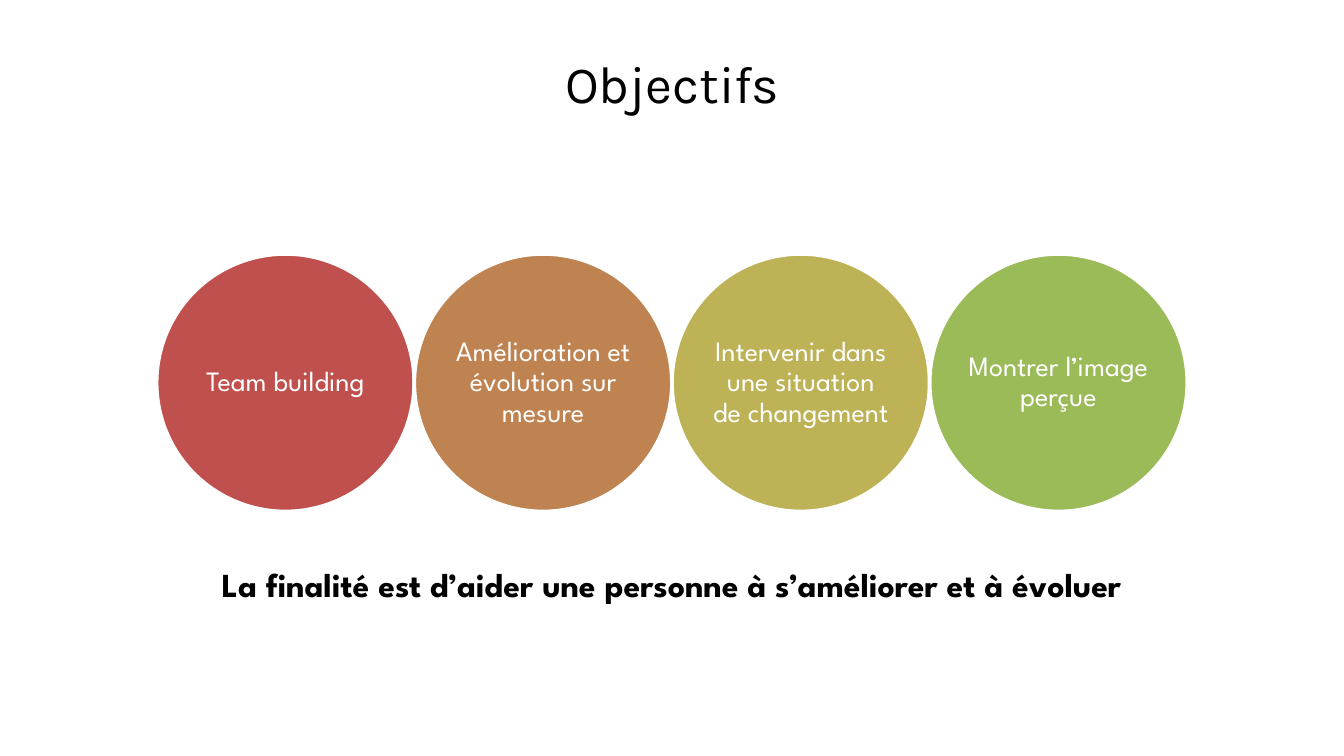
"""Build the goals slide: a title, a row of touching circles and a closing line."""

from dataclasses import dataclass

from pptx import Presentation
from pptx.dml.color import RGBColor
from pptx.enum.shapes import MSO_SHAPE
from pptx.enum.text import MSO_ANCHOR, PP_ALIGN
from pptx.slide import Slide
from pptx.text.text import TextFrame
from pptx.util import Cm, Pt

OVAL = MSO_SHAPE.OVAL
MIDDLE = MSO_ANCHOR.MIDDLE
CENTER = PP_ALIGN.CENTER


@dataclass(frozen=True)
class Style:
    font: str
    size: float
    color: str
    bold: bool = False


@dataclass(frozen=True)
class Theme:
    title: Style = Style("Karla", 28, "000000")
    label: Style = Style("League Spartan", 15, "FFFFFF")
    closing: Style = Style("League Spartan", 18, "000000", True)
    edge: str = "FFFFFF"
    rim: float = 2


@dataclass(frozen=True)
class Goal:
    text: str
    fill: str


THEME = Theme()
WIDTH, HEIGHT = 25.4, 14.29
SIDE, TOP = 4.87, 4.8
GOALS = [
    Goal("Team building", "C0504D"),
    Goal("Amélioration et évolution sur mesure", "BE8351"),
    Goal("Intervenir dans une situation de changement", "BDB255"),
    Goal("Montrer l’image perçue", "9BBB59"),
]


def write(frame: TextFrame, text: str, style: Style) -> None:
    frame.word_wrap = True
    para = frame.paragraphs[0]
    para.text = text
    para.alignment = CENTER
    para.font.name = style.font
    para.font.size = Pt(style.size)
    para.font.bold = style.bold
    para.font.color.rgb = RGBColor.from_string(style.color)


def add_line(slide: Slide, top: float, height: float, text: str, style: Style) -> None:
    box = slide.shapes.add_textbox(0, Cm(top), Cm(WIDTH), Cm(height))
    write(box.text_frame, text, style)


def add_goal(slide: Slide, left: float, goal: Goal) -> None:
    disc = slide.shapes.add_shape(OVAL, Cm(left), Cm(TOP), Cm(SIDE), Cm(SIDE))
    disc.shadow.inherit = False
    disc.fill.solid()
    disc.fill.fore_color.rgb = RGBColor.from_string(goal.fill)
    disc.line.color.rgb = RGBColor.from_string(THEME.edge)
    disc.line.width = Pt(THEME.rim)
    frame = disc.text_frame
    frame.margin_left = frame.margin_right = 0
    frame.margin_top = frame.margin_bottom = 0
    frame.vertical_anchor = MIDDLE
    write(frame, goal.text, THEME.label)
    frame.paragraphs[0].line_spacing = 0.9


def main() -> None:
    deck = Presentation()
    deck.slide_width, deck.slide_height = Cm(WIDTH), Cm(HEIGHT)
    slide = deck.slides.add_slide(deck.slide_layouts[6])
    add_line(slide, 0.84, 0.97, "Objectifs", THEME.title)
    start = (WIDTH - SIDE * len(GOALS)) / 2
    for index, goal in enumerate(GOALS):
        add_goal(slide, start + index * SIDE, goal)
    closing = "La finalité est d’aider une personne à s’améliorer et à évoluer"
    add_line(slide, 10.54, 1.02, closing, THEME.closing)
    deck.save("out.pptx")


if __name__ == "__main__":
    main()
